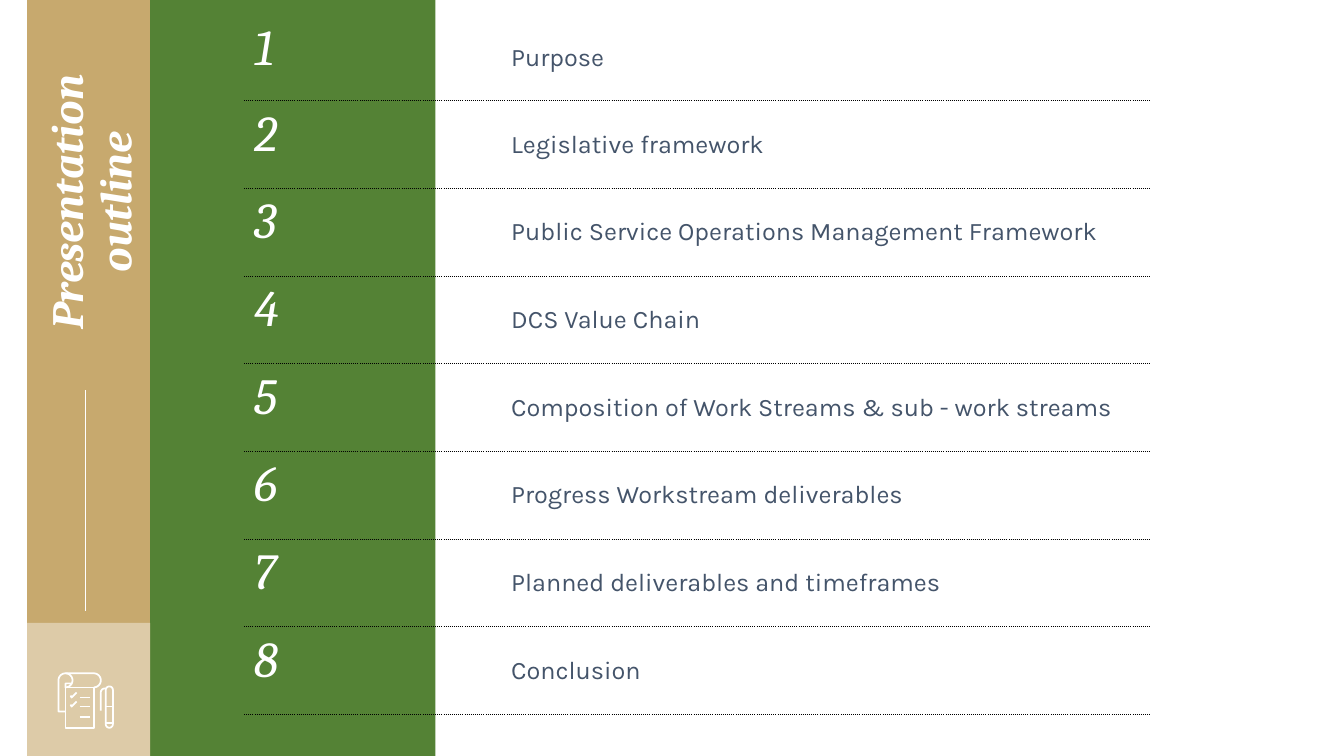
from dataclasses import dataclass
from math import cos, radians, sin

from pptx import Presentation
from pptx.dml.color import RGBColor
from pptx.enum import shapes, text
from pptx.oxml import parse_xml
from pptx.oxml import ns
from pptx.util import Inches, Pt


@dataclass(frozen=True)
class Theme:
    gold: str = "C7A96E"
    sand: str = "DDCBA8"
    green: str = "548235"
    white: str = "FFFFFF"
    slate: str = "44546A"
    rule: str = "000000"
    heading_font: str = "Cambria"
    body_font: str = "Karla"
    title_size: int = 32
    number_size: int = 36
    topic_size: int = 18
    divider_width: float = 0.5
    icon_width: float = 1.25
    rule_width: float = 1


THEME = Theme()
TOPICS = [
    "Purpose",
    "Legislative framework",
    "Public Service Operations Management Framework",
    "DCS Value Chain",
    "Composition of Work Streams & sub - work streams",
    "Progress Workstream deliverables",
    "Planned deliverables and timeframes",
    "Conclusion",
]
NO_TABLE_STYLE = "{2D5ABB26-0587-4C30-8999-92F81FD0307C}"


def add_run(paragraph, words, font_name, size, color, bold=False, italic=False):
    run = paragraph.add_run()
    run.text = words
    font = run.font
    font.name, font.size = font_name, Pt(size)
    font.bold, font.italic = bold, italic
    font.color.rgb = RGBColor.from_string(color)


def style_line(line, width):
    line.color.rgb = RGBColor.from_string(THEME.white)
    line.width = Pt(width)


def add_panel(slide, left, top, width, height, color):
    panel = slide.shapes.add_shape(
        shapes.MSO_SHAPE.RECTANGLE, Inches(left), Inches(top), Inches(width), Inches(height))
    panel.shadow.inherit = False
    panel.fill.solid()
    panel.fill.fore_color.rgb = RGBColor.from_string(color)
    panel.line.fill.background()


def add_rule(parent, x1, y1, x2, y2, width):
    rule = parent.shapes.add_connector(
        shapes.MSO_CONNECTOR.STRAIGHT, Inches(x1), Inches(y1), Inches(x2), Inches(y2))
    style_line(rule.line, width)
    rule._element.spPr.append(parse_xml(f"<a:effectLst {ns.nsdecls('a')}/>"))


def arc(cx, cy, radius, start, end, steps=16):
    """Points along a circle, in degrees clockwise from the right."""
    angles = [radians(start + (end - start) * i / steps) for i in range(steps + 1)]
    return [(cx + radius * cos(a), cy + radius * sin(a)) for a in angles]


def add_outline(parent, points, close=False):
    points = [(Inches(x), Inches(y)) for x, y in points]
    builder = parent.shapes.build_freeform(*points[0])
    builder.add_line_segments(points[1:], close=close)
    outline = builder.convert_to_shape()
    outline.shadow.inherit = False
    outline.fill.background()
    style_line(outline.line, THEME.icon_width)


def add_title(slide):
    box = slide.shapes.add_textbox(Inches(-0.94), Inches(1.52), Inches(3.72), Inches(0.97))
    box.rotation = 270
    frame = box.text_frame
    frame.word_wrap = True
    frame.vertical_anchor = text.MSO_ANCHOR.MIDDLE
    frame.margin_left = frame.margin_right = frame.margin_top = frame.margin_bottom = 0
    title = frame.paragraphs[0]
    title.alignment = text.PP_ALIGN.CENTER
    title.line_spacing = 0.9
    add_run(title, "Presentation outline", THEME.heading_font, THEME.title_size,
            THEME.white, bold=True, italic=True)


def add_checklist_icon(slide):
    icon = slide.shapes.add_group_shape()
    # Sheet and scroll
    add_outline(icon, [(0.65, 6.82), (0.93, 6.82), (0.93, 7.22), (0.65, 7.22)], close=True)
    add_outline(icon, [(0.65, 7.06), (0.58, 7.06), *arc(0.65, 6.75, 0.07, 180, 450),
                       (0.65, 6.78), (0.72, 6.78)])
    add_outline(icon, [*arc(0.93, 6.75, 0.07, 90, -90), (0.65, 6.68)])
    # Text lines and ticks
    for y in (6.92, 7.01, 7.11):
        add_rule(icon, 0.79, y, 0.89, y, THEME.icon_width)
    for y in (6.87, 6.96):
        add_outline(icon, [(0.7, y + 0.03), (0.71, y + 0.05), (0.76, y)])
    # Pen and clip
    add_outline(icon, [*arc(1.085, 7.185, 0.035, 0, 180),
                       *arc(1.085, 6.845, 0.035, 180, 360)], close=True)
    for y in (7.17, 7.01):
        add_rule(icon, 1.05, y, 1.12, y, THEME.icon_width)
    add_outline(icon, [(1, 7.05), *arc(1.04, 6.87, 0.04, 180, 270), (1.05, 6.83)])


def underline_cell(cell):
    border = parse_xml(
        f'<a:lnB {ns.nsdecls("a")} w="{Pt(THEME.rule_width)}">'
        f'<a:solidFill><a:srgbClr val="{THEME.rule}"/></a:solidFill>'
        '<a:prstDash val="sysDot"/></a:lnB>')
    cell._tc.get_or_add_tcPr().insert(0, border)


def add_agenda(slide):
    row_heights = [0.85] + [0.87] * (len(TOPICS) - 1)
    agenda = slide.shapes.add_table(
        len(TOPICS), 2, Inches(2.42), Inches(0.15), Inches(8.99),
        Inches(sum(row_heights))).table
    agenda.first_row = agenda.horz_banding = False
    agenda._tbl.tblPr.find(ns.qn("a:tableStyleId")).text = NO_TABLE_STYLE
    for column, width in zip(agenda.columns, (2.55, 6.44)):
        column.width = Inches(width)
    for i, (topic, height) in enumerate(zip(TOPICS, row_heights)):
        agenda.rows[i].height = Inches(height)
        number_cell, topic_cell = agenda.rows[i].cells
        add_run(number_cell.text_frame.paragraphs[0], str(i + 1), THEME.heading_font,
                THEME.number_size, THEME.white, italic=True)
        add_run(topic_cell.text_frame.paragraphs[0], topic, THEME.body_font,
                THEME.topic_size, THEME.slate)
        topic_cell.vertical_anchor = text.MSO_ANCHOR.MIDDLE
        for cell in (number_cell, topic_cell):
            cell.fill.background()
            underline_cell(cell)


def main():
    deck = Presentation()
    deck.slide_width, deck.slide_height = Inches(13.33), Inches(7.5)
    slide = deck.slides.add_slide(deck.slide_layouts[6])

    # Side panels
    add_panel(slide, 0.27, 0, 1.22, 6.18, THEME.gold)
    add_panel(slide, 1.49, 0, 2.83, 7.5, THEME.green)
    add_panel(slide, 0.27, 6.18, 1.22, 1.33, THEME.sand)

    # Title, divider and icon
    add_title(slide)
    add_rule(slide, 0.85, 3.87, 0.85, 6.06, THEME.divider_width)
    add_checklist_icon(slide)

    # Numbered topics
    add_agenda(slide)
    deck.save("out.pptx")


if __name__ == "__main__":
    main()
